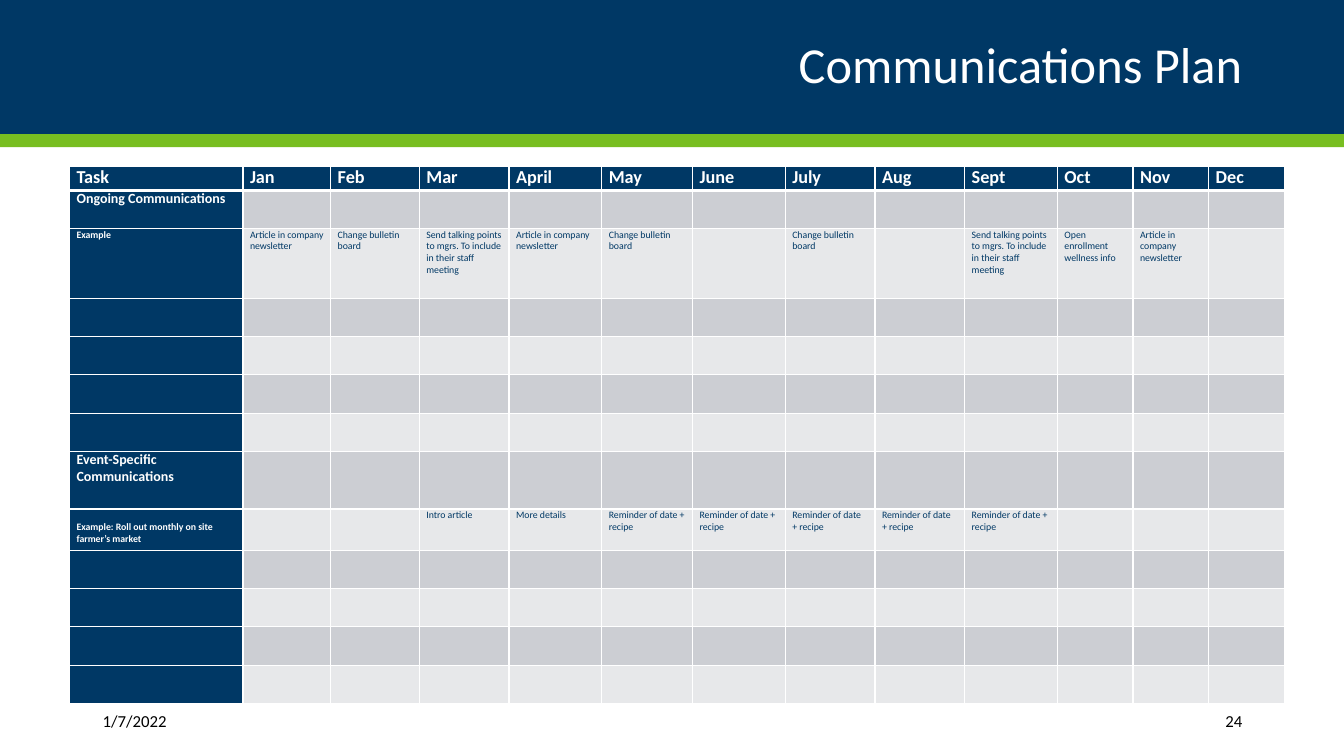
from lxml import etree
from pptx import Presentation
from pptx.dml.color import RGBColor
from pptx.enum.shapes import MSO_SHAPE
from pptx.enum.text import MSO_ANCHOR, PP_ALIGN
from pptx.oxml.ns import qn
from pptx.util import Inches, Pt

NAVY = RGBColor(0x00, 0x38, 0x65)
GREEN = RGBColor(0x78, 0xBE, 0x21)
WHITE = RGBColor(0xFF, 0xFF, 0xFF)
BLACK = RGBColor(0x00, 0x00, 0x00)
DARK_BAND = RGBColor(0xCC, 0xCE, 0xD3)
LIGHT_BAND = RGBColor(0xE7, 0xE8, 0xEA)

HEADINGS = ["Task", "Jan", "Feb", "Mar", "April", "May", "June", "July",
            "Aug", "Sept", "Oct", "Nov", "Dec"]
COL_WIDTHS = [1.72, 0.87, 0.88, 0.89, 0.92, 0.9, 0.92, 0.89, 0.89, 0.92,
              0.75, 0.75, 0.75]
ROW_HEIGHTS = [0.24, 0.38, 0.69] + [0.38] * 4 + [0.57, 0.41] + [0.38] * 4

# Task column: row -> (text, size, top margin)
TASKS = {
    1: ("Ongoing Communications", 10, 0),
    2: ("Example", 7, 0),
    7: ("Event-Specific Communications", 10, 0),
    8: ("Example: Roll out monthly on site farmer’s market", 7, 0.12),
}

# Month entries: row -> text -> months
ENTRIES = {
    2: {
        "Article in company newsletter": ["Jan", "April", "Nov"],
        "Change bulletin board": ["Feb", "May", "July"],
        "Send talking points to mgrs. To include in their staff meeting":
            ["Mar", "Sept"],
        "Open enrollment wellness info": ["Oct"],
    },
    8: {
        "Intro article": ["Mar"],
        "More details": ["April"],
        "Reminder of date + recipe": ["May", "June", "July", "Aug", "Sept"],
    },
}


def write(p, text, size, color, bold=False):
    r = p.add_run()
    r.text = text
    formats = {"name": "Calibri", "size": Pt(size), "bold": bold}
    for name, value in formats.items():
        setattr(r.font, name, value)
    r.font.color.rgb = color


def add_band(slide, top, height, color):
    sp = slide.shapes.add_shape(MSO_SHAPE.RECTANGLE, 0, Inches(top),
                                Inches(13.33), Inches(height))
    sp.shadow.inherit = False
    sp.fill.solid()
    sp.fill.fore_color.rgb = color
    sp.line.fill.background()


def add_text(slide, box, text, size, color, align, spacing=1.0):
    tf = slide.shapes.add_textbox(*map(Inches, box)).text_frame
    tf.word_wrap = True
    tf.vertical_anchor = MSO_ANCHOR.MIDDLE
    p = tf.paragraphs[0]
    p.alignment = align
    p.line_spacing = spacing
    write(p, text, size, color)


def set_borders(cell, widths):
    tcPr = cell._tc.get_or_add_tcPr()
    for side, width in widths.items():
        ln = etree.SubElement(tcPr, qn(f"a:ln{side}"), w=str(Pt(width)))
        fill = etree.SubElement(ln, qn("a:solidFill"))
        etree.SubElement(fill, qn("a:srgbClr"), val=str(WHITE))


def format_cell(cell, row, col):
    set_borders(cell, {"L": 1, "R": 1, "T": 3 if row == 1 else 1,
                       "B": 3 if row == 0 else 1})
    margins = {"margin_left": 0.07, "margin_right": 0.07,
               "margin_top": 0, "margin_bottom": 0}
    for name, value in margins.items():
        setattr(cell, name, Inches(value))
    cell.fill.solid()
    if row == 0 or col == 0:
        cell.fill.fore_color.rgb = NAVY
    else:
        cell.fill.fore_color.rgb = DARK_BAND if row % 2 else LIGHT_BAND


def add_plan(slide):
    frame = slide.shapes.add_table(
        len(ROW_HEIGHTS), len(COL_WIDTHS), Inches(0.69), Inches(1.65),
        Inches(sum(COL_WIDTHS)), Inches(sum(ROW_HEIGHTS)))
    table = frame.table
    for column, width in zip(table.columns, COL_WIDTHS):
        column.width = Inches(width)
    for row, height in zip(table.rows, ROW_HEIGHTS):
        row.height = Inches(height)
    for row in range(len(ROW_HEIGHTS)):
        for col in range(len(COL_WIDTHS)):
            format_cell(table.cell(row, col), row, col)

    # Headings
    for col, heading in enumerate(HEADINGS):
        p = table.cell(0, col).text_frame.paragraphs[0]
        write(p, heading, 13, WHITE, True)

    # Tasks
    for row, (text, size, top) in TASKS.items():
        cell = table.cell(row, 0)
        cell.margin_top = Inches(top)
        write(cell.text_frame.paragraphs[0], text, size, WHITE, True)

    # Month entries
    for row, entries in ENTRIES.items():
        for text, months in entries.items():
            for month in months:
                cell = table.cell(row, HEADINGS.index(month))
                write(cell.text_frame.paragraphs[0], text, 7, NAVY)


def main():
    prs = Presentation()
    prs.slide_width, prs.slide_height = Inches(13.33), Inches(7.5)
    slide = prs.slides.add_slide(prs.slide_layouts[6])

    # Title band
    add_band(slide, 0, 1.33, NAVY)
    add_band(slide, 1.33, 0.13, GREEN)
    add_text(slide, (0.92, 0.17, 11.5, 1), "Communications Plan", 36, WHITE,
             PP_ALIGN.RIGHT, 0.9)

    # Yearly plan
    add_plan(slide)

    # Footer
    add_text(slide, (0.92, 6.95, 1.49, 0.4), "1/7/2022", 12, BLACK,
             PP_ALIGN.LEFT)
    add_text(slide, (10.82, 6.95, 1.6, 0.4), "24", 12, BLACK, PP_ALIGN.RIGHT)

    prs.save("out.pptx")


if __name__ == "__main__":
    main()
